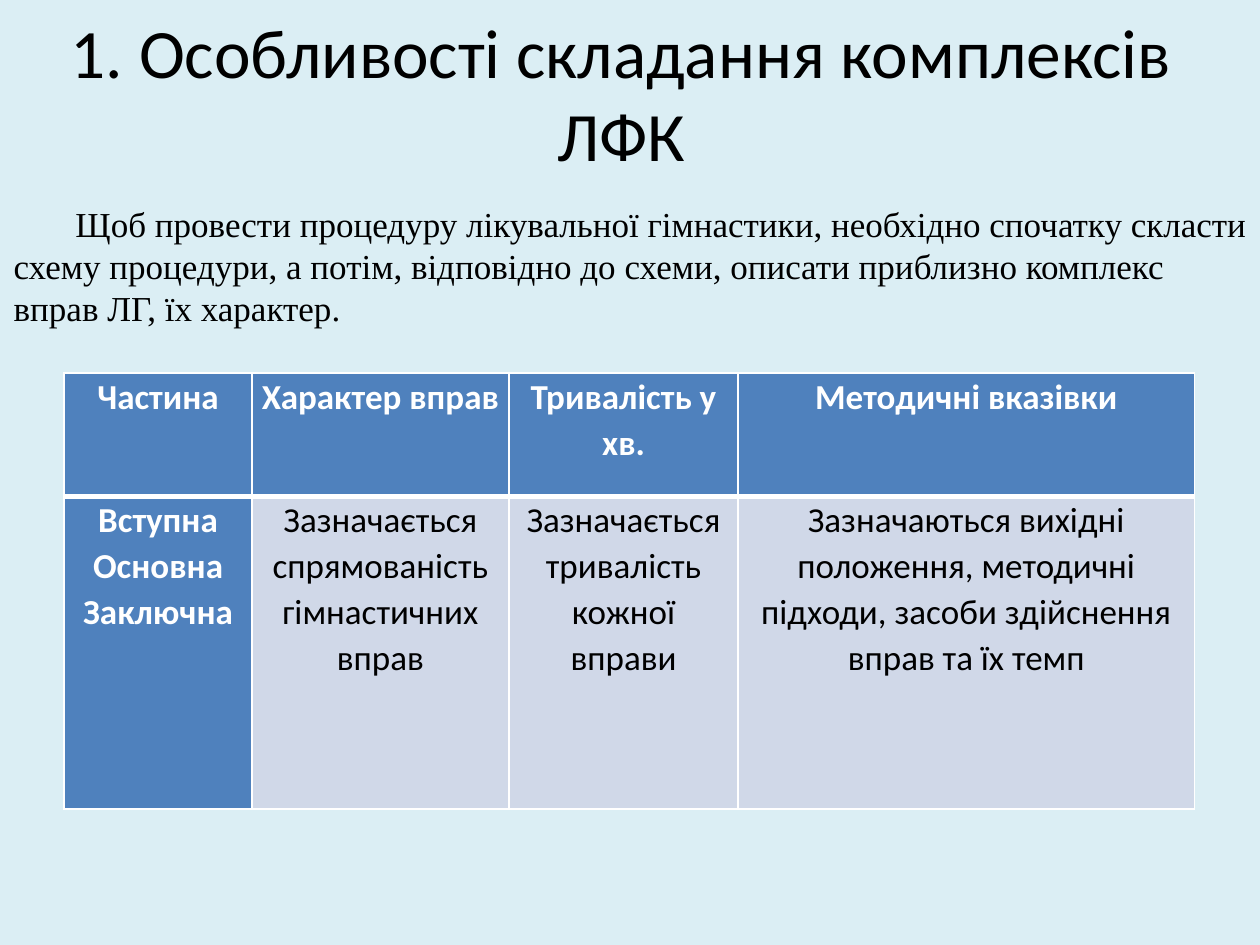
import pptx
import pptx.dml.color
import pptx.enum.text
import pptx.oxml.ns
import pptx.util
from lxml import etree

Inches = pptx.util.Inches
Pt = pptx.util.Pt
ALIGN = pptx.enum.text.PP_ALIGN
ANCHOR = pptx.enum.text.MSO_ANCHOR
AUTO_SIZE = pptx.enum.text.MSO_AUTO_SIZE


def color(value):
    return pptx.dml.color.RGBColor.from_string(value)


class LessonSlide:
    """Holds the lesson style and the slide being filled."""

    BACKGROUND, TEXT, LIGHT = "DBEEF4", "000000", "FFFFFF"
    ACCENT, BODY_FILL = "4F81BD", "D0D8E8"
    SANS, SERIF = "Calibri", "Times New Roman"

    def __init__(self, deck):
        self.slide = deck.slides.add_slide(deck.slide_layouts[5])
        fill = self.slide.background.fill
        fill.solid()
        fill.fore_color.rgb = color(self.BACKGROUND)

    def format(self, paragraph, size, face, ink, bold=False, align=ALIGN.LEFT):
        paragraph.alignment = align
        font = paragraph.font
        font.size, font.name, font.bold = Pt(size), face, bold
        font.color.rgb = color(ink)

    def title(self, wording, left, top, width, height, bottom_inset):
        heading = self.slide.shapes.title
        heading.left, heading.top = Inches(left), Inches(top)
        heading.width, heading.height = Inches(width), Inches(height)
        frame = heading.text_frame
        frame.text = wording
        frame.word_wrap = True
        frame.auto_size = AUTO_SIZE.NONE
        frame.vertical_anchor = ANCHOR.MIDDLE
        frame.margin_bottom = Inches(bottom_inset)
        self.format(frame.paragraphs[0], 39.6, self.SANS, self.TEXT, align=ALIGN.CENTER)

    def intro(self, wording, left, top, width, height, indent):
        box = self.slide.shapes.add_textbox(
            Inches(left), Inches(top), Inches(width), Inches(height))
        frame = box.text_frame
        frame.text = wording
        frame.word_wrap = True
        frame.auto_size = AUTO_SIZE.SHAPE_TO_FIT_TEXT
        frame.vertical_anchor = ANCHOR.MIDDLE
        opening = frame.paragraphs[0]
        self.format(opening, 20, self.SERIF, self.TEXT)
        properties = opening._p.get_or_add_pPr()
        properties.set("marL", "0")
        properties.set("indent", str(Inches(indent)))

    def border(self, cell, side, width):
        qn = pptx.oxml.ns.qn
        line = etree.SubElement(cell._tc.get_or_add_tcPr(), qn(f"a:ln{side}"), w=str(Pt(width)))
        solid = etree.SubElement(line, qn("a:solidFill"))
        etree.SubElement(solid, qn("a:srgbClr"), val=self.LIGHT)

    def cell(self, cell, wording, is_header, is_accent):
        cell.margin_left = cell.margin_right = Inches(0.07)
        cell.margin_top = cell.margin_bottom = 0
        cell.text = wording
        for paragraph in cell.text_frame.paragraphs:
            ink = self.LIGHT if is_accent else self.TEXT
            self.format(paragraph, 20, self.SANS, ink, is_accent, ALIGN.CENTER)
            paragraph.line_spacing = 1.07
        top, bottom = (1, 3) if is_header else (3, 1)
        for side, width in zip("LRTB", (1, 1, top, bottom)):
            self.border(cell, side, width)
        cell.fill.solid()
        cell.fill.fore_color.rgb = color(self.ACCENT if is_accent else self.BODY_FILL)

    def table(self, rows, left, top, widths, heights):
        scheme = self.slide.shapes.add_table(
            len(rows), len(widths), Inches(left), Inches(top),
            Inches(sum(widths)), Inches(sum(heights))).table
        scheme.first_col = True
        for column, width in zip(scheme.columns, widths):
            column.width = Inches(width)
        for row, height in zip(scheme.rows, heights):
            row.height = Inches(height)
        for r, wordings in enumerate(rows):
            for c, wording in enumerate(wordings):
                self.cell(scheme.cell(r, c), wording, r == 0, r == 0 or c == 0)


def main():
    deck = pptx.Presentation()
    deck.slide_width, deck.slide_height = Inches(10), Inches(7.5)
    lesson = LessonSlide(deck)
    lesson.title("1. Особливості складання комплексів ЛФК", 0.43, 0.44, 9, 1.25, 0.71)
    procedure_parts = [
        ["Частина", "Характер вправ", "Тривалість у хв.", "Методичні вказівки"],
        ["Вступна\nОсновна Заключна",
         "Зазначається спрямованість гімнастичних вправ",
         "Зазначається тривалість кожної вправи",
         "Зазначаються вихідні положення, методичні підходи, "
         "засоби здійснення вправ та їх темп"],
    ]
    lesson.table(procedure_parts, 0.51, 2.96, [1.49, 2.04, 1.82, 3.62], [0.98, 2.48])
    lesson.intro(
        "Щоб провести процедуру лікувальної гімнастики, необхідно спочатку "
        "скласти схему процедури, а потім, відповідно до схеми, описати "
        "приблизно комплекс вправ ЛГ, їх характер.", 0.01, 1.55, 9.99, 1.11, 0.49)
    deck.save("out.pptx")


if __name__ == "__main__":
    main()
